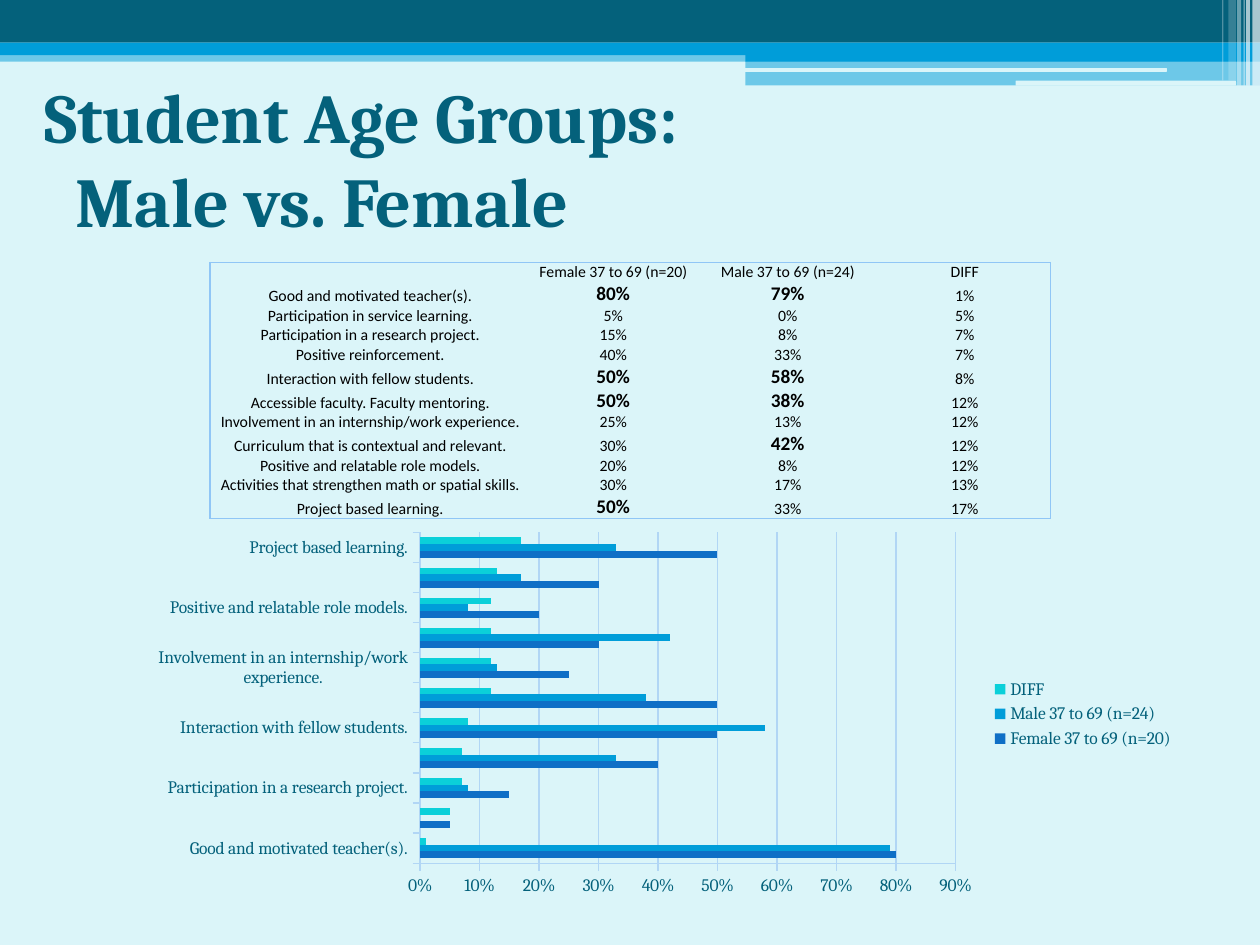
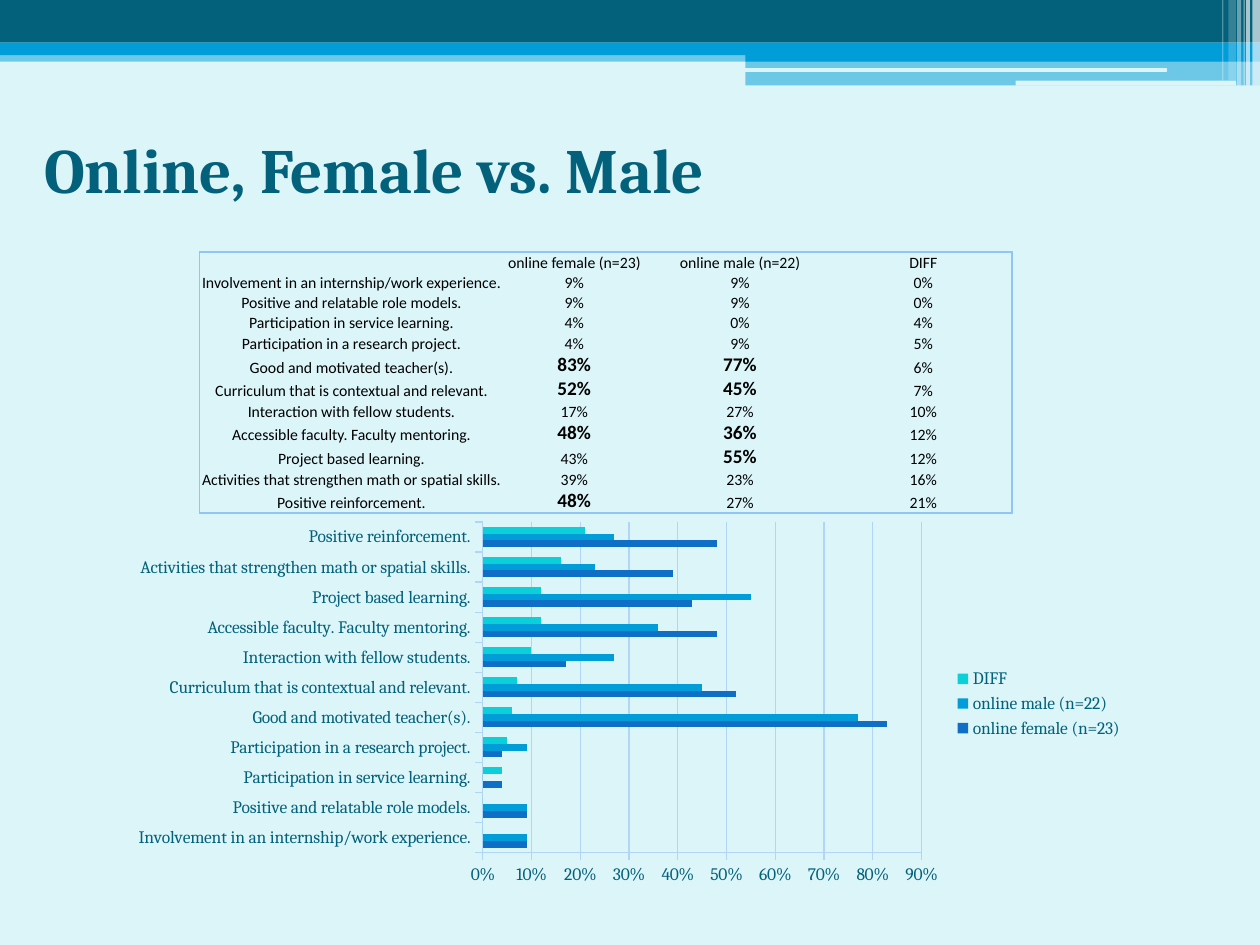
from lxml import etree
from pptx import Presentation
from pptx.chart.data import CategoryChartData
from pptx.dml.color import RGBColor
from pptx.enum import chart as xl, shapes, text
from pptx.oxml import ns, parse_xml
from pptx.util import Pt

COLORS = {
    "page": "DBF5F9", "dark": "04617B", "band": "009DD9", "white": "FFFFFF",
    "black": "000000", "border": "90C6F6", "grid": "B1D6F5",
    "first": "0F6FC6", "second": "009DD9", "diff": "0BD0D9",
}
RECT, ROUND = shapes.MSO_SHAPE.RECTANGLE, shapes.MSO_SHAPE.ROUNDED_RECTANGLE
# shape, left, top, width, height, colour, opacity in percent
BANDS = [
    (RECT, 0, 28.8, 720, 6.4, "band", 50),
    (RECT, 0, 0, 720, 24.4, "dark", 100),
    (RECT, 0, 24.4, 720, 7.2, "band", 100),
    (RECT, 426, 28, 294, 7.2, "band", 100),
    (RECT, 426, 35, 294, 13.8, "band", 50),
    (ROUND, 425.6, 38.9, 241.2, 2.2, "page", 100),
    (ROUND, 580.3, 46.1, 126, 2.9, "page", 100),
]
# left, width, height, opacity in percent
STRIPES = [
    (715.7, 4.3, 49, 65), (712.1, 2.2, 49, 65), (710.6, 0.7, 49, 60),
    (707, 2.2, 49, 40), (702, 4.3, 46, 20), (698.4, 0.7, 46, 30),
]
BANDS += [(RECT, x, 0, w, h, "white", a) for x, w, h, a in STRIPES]

TEACHERS = "Good and motivated teacher(s)."
SERVICE = "Participation in service learning."
RESEARCH = "Participation in a research project."
REINFORCEMENT = "Positive reinforcement."
STUDENTS = "Interaction with fellow students."
FACULTY = "Accessible faculty. Faculty mentoring."
INTERNSHIP = "Involvement in an internship/work experience."
CURRICULUM = "Curriculum that is contextual and relevant."
ROLE_MODELS = "Positive and relatable role models."
SKILLS = "Activities that strengthen math or spatial skills."
PROJECTS = "Project based learning."

AGE_HEADS = ["Female 37 to 69 (n=20)", "Male 37 to 69 (n=24)", "DIFF"]
AGE_ROWS = [
    (TEACHERS, 80, 79, 1), (SERVICE, 5, 0, 5), (RESEARCH, 15, 8, 7),
    (REINFORCEMENT, 40, 33, 7), (STUDENTS, 50, 58, 8), (FACULTY, 50, 38, 12),
    (INTERNSHIP, 25, 13, 12), (CURRICULUM, 30, 42, 12),
    (ROLE_MODELS, 20, 8, 12), (SKILLS, 30, 17, 13), (PROJECTS, 50, 33, 17),
]
ONLINE_HEADS = ["online female (n=23)", "online male (n=22)", "DIFF"]
ONLINE_ROWS = [
    (INTERNSHIP, 9, 9, 0), (ROLE_MODELS, 9, 9, 0), (SERVICE, 4, 0, 4),
    (RESEARCH, 4, 9, 5), (TEACHERS, 83, 77, 6), (CURRICULUM, 52, 45, 7),
    (STUDENTS, 17, 27, 10), (FACULTY, 48, 36, 12), (PROJECTS, 43, 55, 12),
    (SKILLS, 39, 23, 16), (REINFORCEMENT, 48, 27, 21),
]


def rgb(name):
    return RGBColor.from_string(COLORS[name])


def set_font(font, color, **values):
    for key, value in values.items():
        setattr(font, key, value)
    font.color.rgb = rgb(color)


class Deck:
    def __init__(self):
        self.prs = Presentation()
        self.prs.slide_width, self.prs.slide_height = Pt(720), Pt(540)
        self.layout = self.prs.slide_layouts[5]
        fill = self.prs.slide_master.background.fill
        fill.solid()
        fill.fore_color.rgb = rgb("page")
        self.s = None

    def slide(self):
        self.s = self.prs.slides.add_slide(self.layout)

    def bands(self):
        """Draw the header bands and move them to the shared layout."""
        tree = self.layout.element.cSld.spTree
        for i, (kind, x, y, w, h, color, opacity) in enumerate(BANDS):
            sp = self.s.shapes.add_shape(kind, Pt(x), Pt(y), Pt(w), Pt(h))
            sp.shadow.inherit = False
            sp.line.fill.background()
            sp.fill.solid()
            sp.fill.fore_color.rgb = rgb(color)
            if opacity < 100:
                clr = sp.element.spPr.find(".//" + ns.qn("a:srgbClr"))
                etree.SubElement(clr, ns.qn("a:alpha"), val=str(opacity * 1000))
            sp.element.nvSpPr.cNvPr.id = 100 + i
            tree.insert(2 + i, sp.element)

    def title(self, words, top, size, hanging=0):
        sp = self.s.shapes.title
        sp.left, sp.top, sp.width, sp.height = Pt(18), Pt(top), Pt(690), Pt(84)
        tf = sp.text_frame
        tf.text = words
        tf.word_wrap = True
        tf.auto_size = text.MSO_AUTO_SIZE.NONE
        tf.vertical_anchor = text.MSO_ANCHOR.MIDDLE
        p = tf.paragraphs[0]
        p.alignment = text.PP_ALIGN.LEFT
        if hanging:
            pPr = p._p.get_or_add_pPr()
            pPr.set("marL", str(Pt(hanging)))
            pPr.set("indent", str(-Pt(hanging)))
        for r in p.runs:
            set_font(r.font, "dark", name="Cambria", size=Pt(size), bold=True)

    def borders(self, cell, edges):
        tcPr = cell._tc.get_or_add_tcPr()
        for side in "LRTB":
            line = "<a:noFill/>"
            if side in edges:
                line = f'<a:solidFill><a:srgbClr val="{COLORS["border"]}"/></a:solidFill>'
            tcPr.append(parse_xml(
                f'<a:ln{side} {ns.nsdecls("a")} w="{Pt(1)}">{line}</a:ln{side}>'))

    def cell(self, cell, words, strong, edges):
        for side in ("left", "right", "top", "bottom"):
            setattr(cell, "margin_" + side, 0)
        cell.vertical_anchor = text.MSO_ANCHOR.BOTTOM
        self.borders(cell, edges)
        cell.fill.background()
        p = cell.text_frame.paragraphs[0]
        p.alignment = text.PP_ALIGN.CENTER
        if not words:
            etree.SubElement(p._p, ns.qn("a:endParaRPr"), sz="900")
            return
        r = p.add_run()
        r.text = words
        set_font(r.font, "black", name="Calibri", size=Pt(11 if strong else 9),
                 bold=strong)

    def table(self, heads, rows, left, top, widths, row_height):
        """Percentages by group; the four highest of each group stand out."""
        grid = [["", *heads], *rows]
        last_row, last_col = len(grid) - 1, len(heads)
        cutoffs = [sorted(col)[-4] for col in list(zip(*rows))[1:last_col]]
        table = self.s.shapes.add_table(
            len(grid), last_col + 1, Pt(left), Pt(top), Pt(sum(widths)),
            Pt(row_height * len(grid))).table
        table.first_row = table.horz_banding = False
        for column, width in zip(table.columns, widths):
            column.width = Pt(width)
        for i, values in enumerate(grid):
            table.rows[i].height = Pt(row_height)
            for j, value in enumerate(values):
                number = isinstance(value, int)
                strong = number and j < last_col and value >= cutoffs[j - 1]
                edges = [side for side, on in zip("LRTB", (
                    j == 0, j == last_col, i == 0, i == last_row)) if on]
                self.cell(table.cell(i, j), f"{value}%" if number else value,
                          strong, edges)

    def chart(self, heads, rows, box, plot_x, plot_w):
        names, *columns = zip(*rows)
        data = CategoryChartData(number_format="0%")
        data.categories = names
        for head, column in zip(heads, columns):
            data.add_series(head, [v / 100 for v in column])
        chart = self.s.shapes.add_chart(
            xl.XL_CHART_TYPE.BAR_CLUSTERED, *map(Pt, box), data).chart
        set_font(chart.font, "dark", name="Cambria", size=Pt(10))
        chart.has_title = False
        chart.has_legend = True
        chart.legend.position = xl.XL_LEGEND_POSITION.RIGHT
        chart.legend.include_in_layout = False
        plot = chart.plots[0]
        plot.vary_by_categories = False
        plot.gap_width, plot.overlap = 150, 0
        for series, color in zip(plot.series, ("first", "second", "diff")):
            series.format.fill.solid()
            series.format.fill.fore_color.rgb = rgb(color)
        axis = chart.value_axis
        axis.minimum_scale, axis.maximum_scale, axis.major_unit = 0, 0.9, 0.1
        axis.has_major_gridlines = True
        axis.tick_labels.number_format = "0%"
        axis.tick_labels.number_format_is_linked = False
        for ax in (axis, chart.category_axis):
            ax.major_tick_mark = xl.XL_TICK_MARK.OUTSIDE
        for part in (axis, chart.category_axis, axis.major_gridlines):
            part.format.line.color.rgb = rgb("grid")
            part.format.line.width = Pt(0.75)
        self.plot_area(chart, plot_x, plot_w)

    def plot_area(self, chart, x, w):
        """Fix the inner plot area, in fractions of the chart."""
        area = chart._chartSpace.chart.plotArea
        for old in area.findall(ns.qn("c:layout")):
            area.remove(old)
        layout = etree.Element(ns.qn("c:layout"))
        manual = etree.SubElement(layout, ns.qn("c:manualLayout"))
        for tag, val in (("layoutTarget", "inner"), ("xMode", "edge"),
                         ("yMode", "edge"), ("x", x), ("y", 0.02),
                         ("w", w), ("h", 0.875)):
            etree.SubElement(manual, ns.qn("c:" + tag), val=str(val))
        area.insert(0, layout)


def main():
    deck = Deck()
    deck.slide()
    deck.bands()
    deck.title("Student Age Groups:\vMale vs. Female", 48, 40, hanging=18)
    deck.table(AGE_HEADS, AGE_ROWS, 120, 150, (183, 95, 104.4, 97.9), 11.2)
    deck.chart(AGE_HEADS, AGE_ROWS, (78, 300, 600, 216), 0.27, 0.51)

    deck.slide()
    deck.title("Online, Female vs. Male", 54, 36)
    deck.chart(ONLINE_HEADS, ONLINE_ROWS, (66, 294, 583, 216), 0.36, 0.43)
    deck.table(ONLINE_HEADS, ONLINE_ROWS, 114, 144, (173.5, 81.4, 108, 101.5), 11.6)
    deck.prs.save("out.pptx")


if __name__ == "__main__":
    main()
